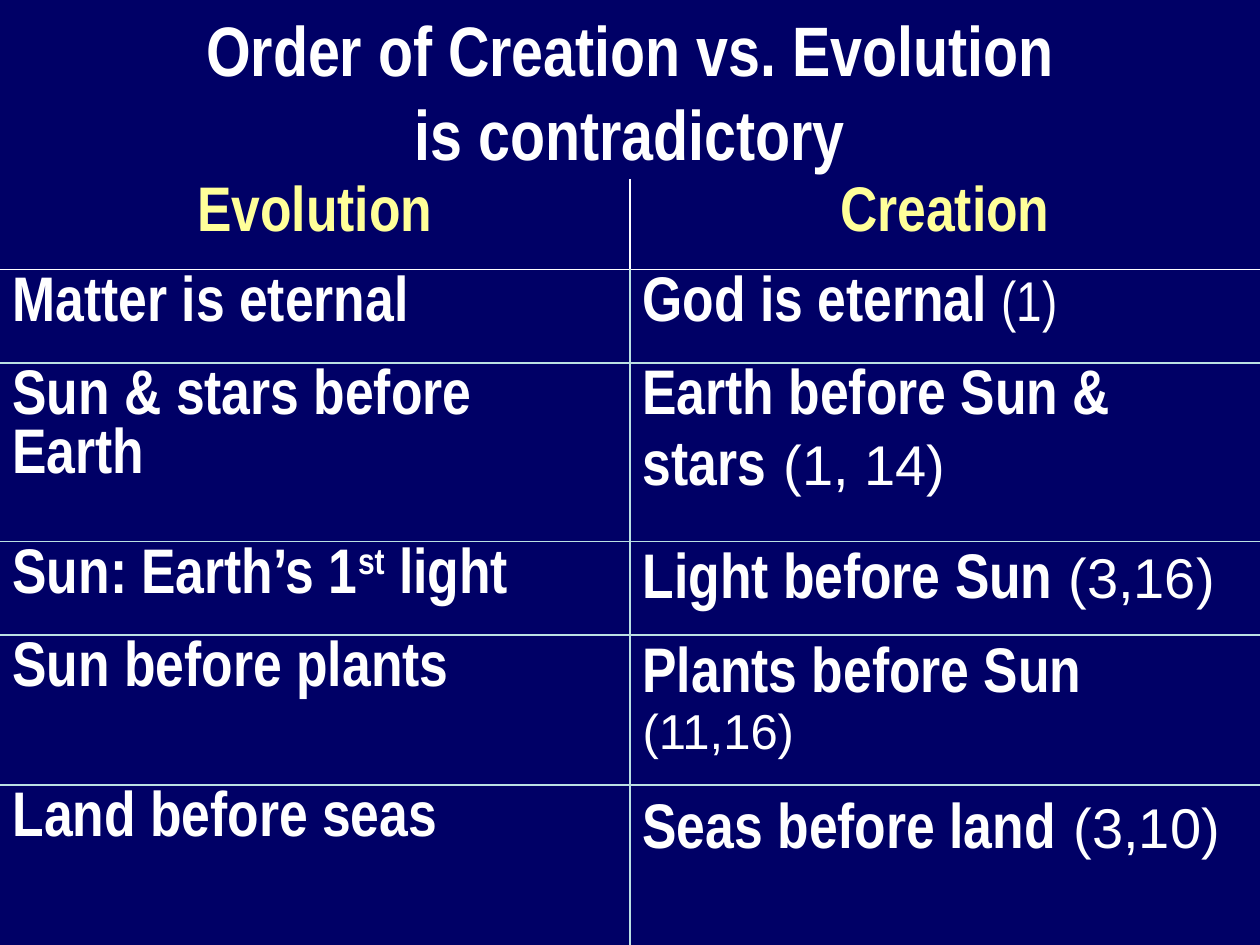
from pptx import Presentation, util as u
from pptx.dml.color import RGBColor
from pptx.enum import text
from pptx.oxml import parse_xml
from pptx.oxml.ns import nsdecls

COLORS = {"navy": "000066", "white": "FFFFFF", "yellow": "FFFF99", "pale": "BBE0E3"}
STRONG = {"name": "Arial Narrow", "size": u.Pt(36), "bold": True}
HEADING = {**STRONG, "size": u.Pt(40)}
GAP = {**STRONG, "name": "Arial"}
VERSE = {"name": "Arial", "size": u.Pt(32), "bold": False}
NARROW_VERSE = {**VERSE, "name": "Arial Narrow"}
SMALL_VERSE = {**VERSE, "size": u.Pt(28)}
ROW_HEIGHTS = [0.72, 0.74, 1.42, 0.74, 1.19, 1.93]
COMPARISON = [
    ([("Evolution", STRONG)], [("Creation", STRONG)]),
    ([("Matter is eternal", STRONG)], [("God is eternal ", STRONG), ("(1)", NARROW_VERSE)]),
    ([("Sun & stars before Earth", STRONG)],
     [("Earth before Sun & stars", STRONG), (" ", GAP), ("(1, 14)", VERSE)]),
    ([("Sun: Earth’s 1", STRONG), ("st", {**STRONG, "baseline": 30000}), (" light", STRONG)],
     [("Light before Sun", STRONG), (" (3,16)", VERSE)]),
    ([("Sun before plants", STRONG)],
     [("Plants before Sun", STRONG), (" ", VERSE), ("(11,16)", SMALL_VERSE)]),
    ([("Land before seas", STRONG)],
     [("Seas before land", STRONG), (" ", GAP), ("(3,10)", VERSE)]),
]


class Deck:
    """Holds the style and the current slide, with lengths as shares of its size."""

    def __init__(self, width, height):
        self.show = Presentation()
        self.show.slide_width, self.show.slide_height = u.Inches(width), u.Inches(height)
        self.slide = self.show.slides.add_slide(self.show.slide_layouts[6])
        self.paint(self.slide.background.fill, "navy")

    def paint(self, fill, color):
        fill.solid()
        fill.fore_color.rgb = RGBColor.from_string(COLORS[color])

    def box(self, *shares):
        sides = (self.show.slide_width, self.show.slide_height) * 2
        return [round(share * side) for share, side in zip(shares, sides)]

    def add_runs(self, paragraph, runs, color="white", centered=False):
        paragraph.alignment = text.PP_ALIGN.CENTER if centered else text.PP_ALIGN.LEFT
        for words, style in runs:
            run = paragraph.add_run()
            run.text = words
            run.font.color.rgb = RGBColor.from_string(COLORS[color])
            for key, value in style.items():
                if key == "baseline":
                    run.font._element.set(key, str(value))
                else:
                    setattr(run.font, key, value)

    def title(self, lines, *shares):
        frame = self.slide.shapes.add_textbox(*self.box(*shares)).text_frame
        frame.word_wrap = True
        frame.auto_size = text.MSO_AUTO_SIZE.SHAPE_TO_FIT_TEXT
        for number, line in enumerate(lines):
            paragraph = frame.add_paragraph() if number else frame.paragraphs[0]
            self.add_runs(paragraph, [(line, HEADING)], centered=True)

    def border(self, cell, sides):
        properties = cell._tc.get_or_add_tcPr()
        for place, (side, color) in enumerate(sides.items()):
            paint = f'<a:solidFill><a:srgbClr val="{COLORS[color]}"/></a:solidFill>' if color else "<a:noFill/>"
            properties.insert(place, parse_xml(f'<a:{side} {nsdecls("a")} w="12700">{paint}</a:{side}>'))

    def table(self, rows, heights, *shares):
        frame = self.slide.shapes.add_table(len(rows), len(rows[0]), *self.box(*shares))
        table = frame.table
        table.first_row = table.horz_banding = False
        last_row, last_column = len(rows) - 1, len(rows[0]) - 1
        for row, (entries, height) in enumerate(zip(rows, heights)):
            table.rows[row].height = u.Inches(height)
            for column, runs in enumerate(entries):
                cell = table.cell(row, column)
                cell.fill.background()
                head = row == 0
                inner = "white" if head else "pale"
                self.border(cell, {
                    "lnL": inner if column else None,
                    "lnR": inner if column < last_column else None,
                    "lnT": None if head else "white" if row == 1 else "pale",
                    "lnB": inner if row < last_row else None,
                })
                paragraph = cell.text_frame.paragraphs[0]
                self.add_runs(paragraph, runs, "yellow" if head else "white", head)
                spacing = parse_xml(f'<a:spcBef {nsdecls("a")}><a:spcPct val="20000"/></a:spcBef>')
                paragraph._p.get_or_add_pPr().append(spacing)


def main():
    deck = Deck(10, 7.5)
    deck.table(COMPARISON, ROW_HEIGHTS, 0, 1.42 / 7.5, 1, 0.9)
    deck.title(["Order of Creation vs. Evolution", "is contradictory"], 0, 0, 1, 1.45 / 7.5)
    deck.show.save("out.pptx")


if __name__ == "__main__":
    main()
